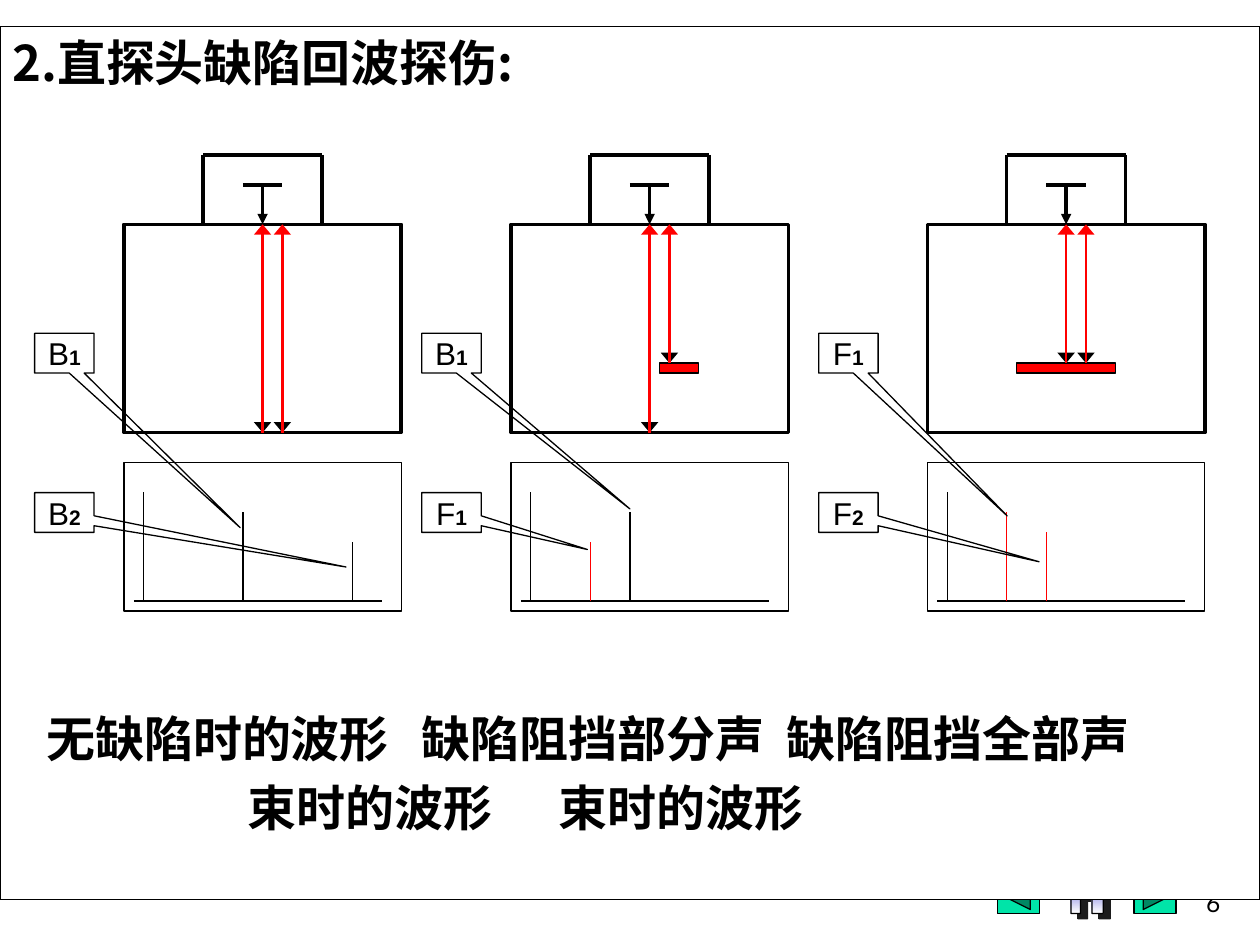
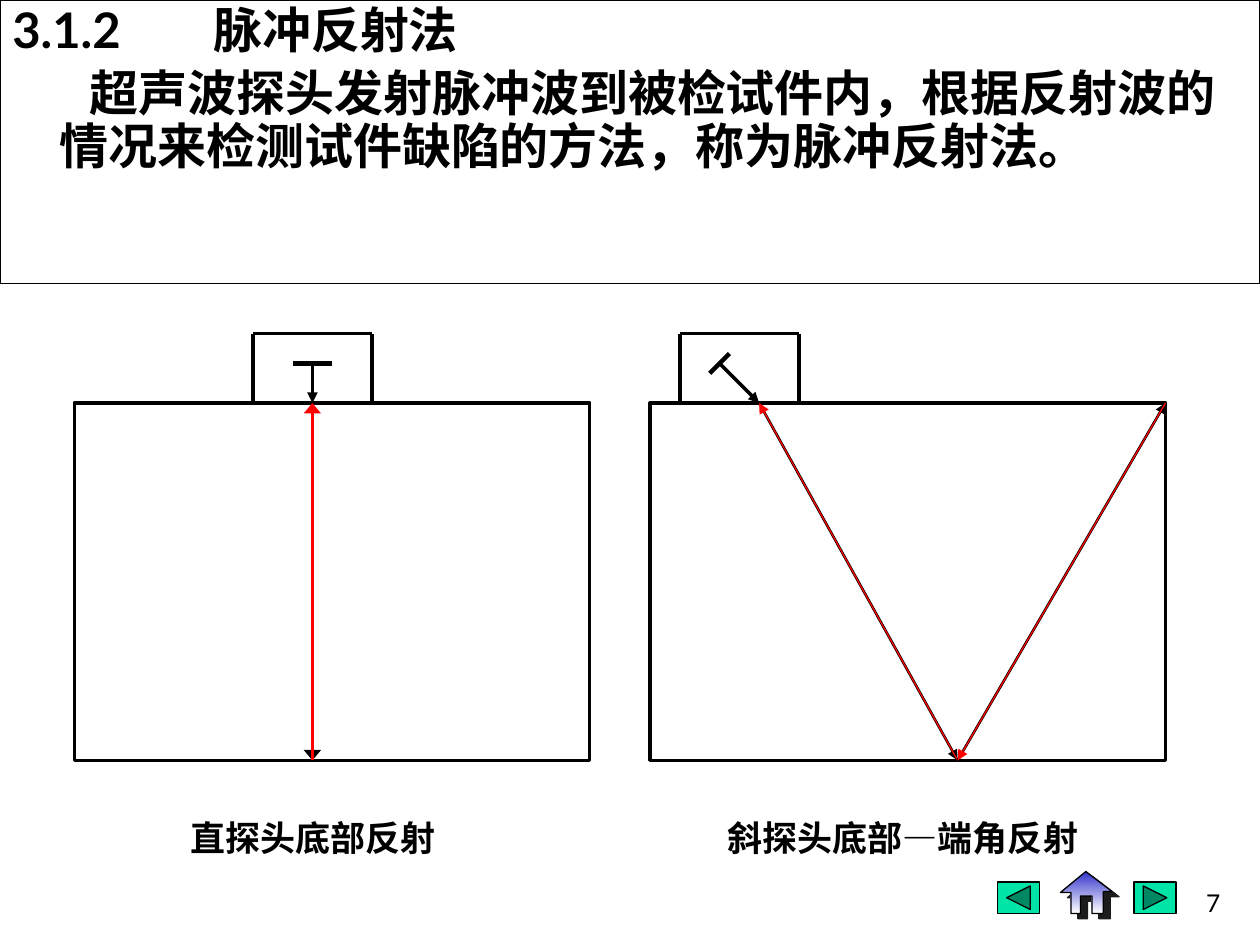
from lxml.etree import SubElement
from pptx import Presentation
from pptx.dml.color import RGBColor
from pptx.enum.shapes import MSO_CONNECTOR, MSO_SHAPE
from pptx.enum.text import MSO_ANCHOR, PP_ALIGN
from pptx.oxml.ns import qn
from pptx.util import Pt

BLACK, WHITE, RED, GREEN = "000000", "FFFFFF", "FF0000", "00E4A8"
HOME_BLUE, HOME_SHADOW = "3333CC", "1C1C1C"
LATIN, HAN, LABEL = "Lato", "Noto Sans CJK SC", "Arial"
WIDTH, HEIGHT = 720, 540
PROBE_W, PROBE_H, UNIT = 68, 39.7, 11.3


def rgb(value):
    """Turn a hex string into a colour."""
    return RGBColor.from_string(value)


def shape(s, kind, x, y, w, h, fill=None, weight=0.75):
    """Add a black-outlined preset shape without shadow."""
    sp = s.shapes.add_shape(kind, Pt(x), Pt(y), Pt(w), Pt(h))
    sp.shadow.inherit = False
    if fill:
        sp.fill.solid()
        sp.fill.fore_color.rgb = rgb(fill)
    else:
        sp.fill.background()
    sp.line.color.rgb = rgb(BLACK)
    sp.line.width = Pt(weight)
    return sp


def line(s, start, end, color=BLACK, weight=0.75, head=None, joins=(None, None)):
    """Draw a straight line, with an arrowhead of width head at its end."""
    ends = [Pt(v) for v in (*start, *end)]
    cxn = s.shapes.add_connector(MSO_CONNECTOR.STRAIGHT, *ends)
    cxn.line.color.rgb = rgb(color)
    cxn.line.width = Pt(weight)
    if head:
        ln = cxn._element.spPr.find(qn("a:ln"))
        SubElement(ln, qn("a:tailEnd"), type="triangle", w=head, len="med")
    SubElement(cxn._element.spPr, qn("a:effectLst"))
    for connect, join in zip((cxn.begin_connect, cxn.end_connect), joins):
        if join:
            connect(*join)


def style(r, size, latin=LATIN, bold=False):
    """Format a run in black with its Latin and Han fonts."""
    r.font.size = Pt(size)
    r.font.bold = bold
    r.font.color.rgb = rgb(BLACK)
    r.font.name = latin
    SubElement(r._r.get_or_add_rPr(), qn("a:ea"), typeface=HAN)


def text(s, x, y, w, h, content, size, font, align, anchor, bold=False):
    """Add a one-line text box."""
    tf = s.shapes.add_textbox(Pt(x), Pt(y), Pt(w), Pt(h)).text_frame
    tf.word_wrap = True
    tf.vertical_anchor = anchor
    p = tf.paragraphs[0]
    p.text = content
    p.alignment = align
    style(p.runs[0], size, font, bold)


def body(s, top, height, paragraphs):
    """Fill a full-width frame with (text, latin, line, before, margin, indent) paragraphs."""
    sp = shape(s, MSO_SHAPE.RECTANGLE, 0, top, WIDTH, height, WHITE)
    tf = sp.text_frame
    tf.word_wrap = True
    tf.vertical_anchor = MSO_ANCHOR.TOP
    for i, (content, latin, spacing, before, margin, indent) in enumerate(paragraphs):
        p = tf.add_paragraph() if i else tf.paragraphs[0]
        p.text = content
        p.alignment = PP_ALIGN.LEFT
        p.line_spacing = Pt(spacing)
        p.space_before = Pt(before)
        pPr = p._p.get_or_add_pPr()
        pPr.set("marL", str(Pt(margin)))
        pPr.set("indent", str(Pt(indent)))
        style(p.runs[0], 28, latin, True)


def home_icon(s, x, y):
    """Draw the house with a gradient and a hard shadow."""
    points = [(14.5, 0), (0, 12), (6, 12), (6, 24), (11.5, 24), (11.5, 14),
              (18, 14), (18, 24), (24.5, 24), (24.5, 11.5), (29.5, 11.5)]
    moved = [(Pt(x + dx), Pt(y + dy)) for dx, dy in points]
    fb = s.shapes.build_freeform(*moved[0], scale=1.0)
    fb.add_line_segments(moved[1:], close=True)
    sp = fb.convert_to_shape()
    sp.fill.gradient()
    sp.fill.gradient_angle = 270
    for stop, color in zip(sp.fill.gradient_stops, (HOME_BLUE, WHITE)):
        stop.color.rgb = rgb(color)
    sp.line.color.rgb = rgb(BLACK)
    sp.line.width = Pt(0.75)
    effects = SubElement(sp._element.spPr, qn("a:effectLst"))
    shadow = SubElement(effects, qn("a:outerShdw"), dist=str(Pt(5)), dir=str(37 * 60000), algn="ctr")
    SubElement(shadow, qn("a:srgbClr"), val=HOME_SHADOW)


def footer(s, number):
    """Place the navigation buttons and the page number."""
    home_icon(s, 606, 498)
    shape(s, MSO_SHAPE.ACTION_BUTTON_BACK_OR_PREVIOUS, 570, 504, 24, 18, GREEN)
    shape(s, MSO_SHAPE.ACTION_BUTTON_FORWARD_OR_NEXT, 648, 504, 24, 18, GREEN)
    text(s, 554.4, 492, 150, 36, str(number), 14, LATIN, PP_ALIGN.RIGHT, MSO_ANCHOR.BOTTOM)


def probe(s, cx, bottom, lean=0, join=None):
    """Draw a probe housing and its crystal, tilted when lean is set."""
    left, right, top = cx - PROBE_W / 2, cx + PROBE_W / 2, bottom - PROBE_H
    outline = [(left, bottom), (left, top), (right, top), (right, bottom)]
    for start, end in zip(outline, outline[1:]):
        line(s, start, end, weight=2)
    x, y = cx - lean, bottom - 2 * UNIT
    dx, dy = (lean / 2, -lean / 2) if lean else (UNIT, 0)
    line(s, (x, y), (cx + lean, bottom), weight=2, head="med", joins=(None, join))
    line(s, (x - dx, y - dy), (x + dx, y + dy), weight=2.5)


def ray(s, start, end, red=1.5, head="lg", joins=(None, None)):
    """Draw a sound path: black on the way out, red on the way back."""
    line(s, start, end, BLACK, 1.5, head, joins)
    line(s, end, start, RED, red, head, joins[::-1])


def callout(s, x, y, label, tip):
    """Add an echo label such as B1 pointing at tip."""
    w, h = 34, 22.7
    sp = shape(s, MSO_SHAPE.RECTANGULAR_CALLOUT, x, y, w, h)
    sp.adjustments[0] = (tip[0] - x - w / 2) / w
    sp.adjustments[1] = (tip[1] - y - h / 2) / h
    tf = sp.text_frame
    tf.word_wrap = True
    tf.vertical_anchor = MSO_ANCHOR.MIDDLE
    p = tf.paragraphs[0]
    p.alignment = PP_ALIGN.CENTER
    for char, size, bold in zip(label, (18, 12), (False, True)):
        r = p.add_run()
        r.text = char
        style(r, size, LABEL, bold)


def test_block(s, x, y, reflector, blocked):
    """Draw a specimen with a probe and two sound paths, blocked marking those that hit the flaw."""
    w, h, depth = 158.5, 119, 79.3
    cx, top = x + w / 2, y + PROBE_H
    block = shape(s, MSO_SHAPE.RECTANGLE, x, top, w, h, WHITE, 2)
    probe(s, cx, top, join=(block, 0))
    flaw = None
    if reflector:
        offset, width = reflector
        flaw = shape(s, MSO_SHAPE.RECTANGLE, cx + offset, top + depth, width, 5.7, RED)
    for i, hit in enumerate(blocked):
        px = cx + i * UNIT
        target = (flaw, 0) if hit else (block, 2)
        joins = (None, None) if i else ((block, 0), target)
        ray(s, (px, top), (px, top + (depth if hit else h)), joins=joins)


def screen(s, x, y, echoes):
    """Draw the oscilloscope with its initial pulse and the echoes."""
    shape(s, MSO_SHAPE.RECTANGLE, x, y, 158.5, 85)
    base = y + 79.3
    line(s, (x + 5.7, base), (x + 147.4, base))
    for dx, height, color in [(UNIT, 62.3, BLACK), *echoes]:
        line(s, (x + dx, base), (x + dx, base - height), color)


def panel(s, x, y, reflector, blocked, echoes, label_gap, labels):
    """Place a test block, its screen and its echo labels."""
    test_block(s, x, y, reflector, blocked)
    screen(s, x, y + 175.7, echoes)
    for dy, (label, dx, tip_y) in zip((102, 193), labels):
        callout(s, x - label_gap, y + dy, label, (x + dx, y + tip_y))


def captions(s, x, y):
    """Set the two rows of waveform captions."""
    rows = [
        [(0, "无缺陷时的波形"), (214.6, "缺陷阻挡部分声"), (423.2, "缺陷阻挡全部声")],
        [(115.2, "束时的波形"), (292.8, "束时的波形")],
    ]
    for i, row in enumerate(rows):
        for dx, content in row:
            text(s, x + dx, y + i * 39.4, 220, 48, content, 28, HAN,
                 PP_ALIGN.LEFT, MSO_ANCHOR.MIDDLE, True)


def echo_slide(s):
    """Build the slide on flaw echoes with a straight probe."""
    footer(s, 6)
    body(s, 15, 499, [("2.直探头缺陷回波探伤:", HAN, 33.5, 0, 0, 0)])
    panels = [
        (70.8, None, (False, False), [(68, 51, BLACK), (130.7, 34, BLACK)],
         51, [("B1", 66.5, 213), ("B2", 127, 235.5)]),
        (292, (5.5, 22.6), (False, True), [(68, 51, BLACK), (45.3, 34, RED)],
         51, [("B1", 68, 202.3), ("F1", 43.7, 225.5)]),
        (530, (-28.3, 56.6), (True, True), [(45.3, 51, RED), (68, 39.7, RED)],
         62.2, [("F1", 45.6, 206.3), ("F2", 63.8, 232.5)]),
    ]
    for x, *parts in panels:
        panel(s, x, 88.5, *parts)
    captions(s, 19.4, 397.5)


def reflection(s, x, y, probe_dx, oblique, caption, caption_x):
    """Draw a large specimen with straight or oblique sound and its caption."""
    w, h = 294.5, 204.2
    shape(s, MSO_SHAPE.RECTANGLE, x, y, w, h, WHITE, 2)
    cx = x + probe_dx
    probe(s, cx, y, UNIT if oblique else 0)
    if oblique:
        bounce = (x + 175.7, y + h)
        ray(s, (cx + UNIT, y), bounce, 0.75, "med")
        ray(s, bounce, (x + w, y), 0.75, "med")
    else:
        ray(s, (cx, y), (cx, y + h))
    text(s, x + caption_x, y + 232.5, 218, 31, caption, 20, LABEL,
         PP_ALIGN.CENTER, MSO_ANCHOR.MIDDLE, True)


def pulse_slide(s):
    """Build the slide on the pulse reflection method."""
    footer(s, 7)
    body(s, 0, 162, [
        ("3.1.2\t\t 脉冲反射法", LATIN, 29.8, 0, 0, 0),
        ("超声波探头发射脉冲波到被检试件内，根据反射波的情况来检测试件缺陷的方法，称为脉冲反射法。",
         LATIN, 30.5, 5.5, 27, 17.3),
    ])
    reflection(s, 42.5, 230.3, 136, False, "直探头底部反射", 27.3)
    reflection(s, 371.5, 230.3, 51, True, "斜探头底部—端角反射", 35.4)


def main():
    """Create and save the presentation."""
    prs = Presentation()
    prs.slide_width, prs.slide_height = Pt(WIDTH), Pt(HEIGHT)
    for build in (echo_slide, pulse_slide):
        build(prs.slides.add_slide(prs.slide_layouts[6]))
    prs.save("out.pptx")


if __name__ == "__main__":
    main()
